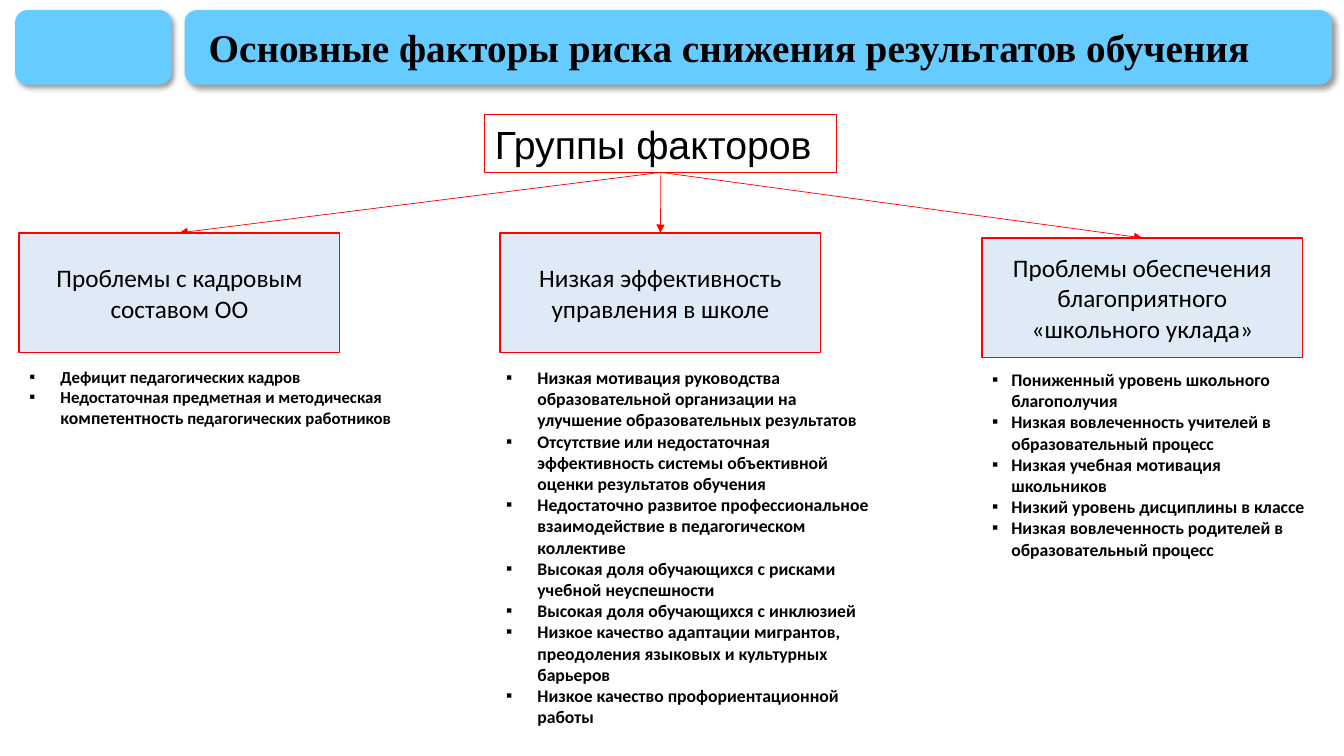
from lxml import etree
from pptx import Presentation
from pptx.dml.color import RGBColor
from pptx.enum import shapes, text
from pptx.oxml import ns
from pptx.util import Inches, Pt

RED, SKY, PALE, BLACK = "FF0000", "66CCFF", "DEEBF7", "000000"

# Each group: heading, card left and top, list position and width, indent, size, factors.
# A factor may be a list of (text, size) parts.
GROUPS = [
    ("Проблемы с кадровым составом ОО", 0.19, 2.31,
     (0.19, 3.59, 3.92, 0.72), 0.31, 12, [
         "Дефицит педагогических кадров",
         [("Недостаточная предметная и методическая ", 12),
          ("компетентность", 12.6),
          (" педагогических работников", 12)],
     ]),
    ("Низкая эффективность управления в школе", 4.96, 2.31,
     (4.92, 3.59, 3.89, 3.71), 0.31, 12.6, [
         "Низкая мотивация руководства образовательной организации на "
         "улучшение образовательных результатов",
         "Отсутствие или недостаточная эффективность системы объективной "
         "оценки результатов обучения",
         "Недостаточно развитое профессиональное взаимодействие в "
         "педагогическом коллективе",
         "Высокая доля обучающихся с рисками учебной неуспешности",
         "Высокая доля обучающихся с инклюзией",
         "Низкое качество адаптации мигрантов, преодоления языковых и "
         "культурных барьеров",
         "Низкое качество профориентационной работы",
     ]),
    ("Проблемы обеспечения благоприятного «школьного уклада»", 9.74, 2.36,
     (9.74, 3.61, 3.45, 2.01), 0.19, 12.6, [
         "Пониженный уровень школьного благополучия",
         "Низкая вовлеченность учителей в образовательный процесс",
         "Низкая учебная мотивация школьников",
         "Низкий уровень дисциплины в классе",
         "Низкая вовлеченность родителей в образовательный процесс",
     ]),
]


def color(value):
    return RGBColor.from_string(value)


def add_xml(parent, tag, **attributes):
    return etree.SubElement(parent, ns.qn(tag), attributes)


def place(shape, left, top, width, height):
    shape.left, shape.top = Inches(left), Inches(top)
    shape.width, shape.height = Inches(width), Inches(height)


def write(paragraph, words, size=18, font="Calibri", bold=False,
          align=text.PP_ALIGN.LEFT, spacing=1.0):
    paragraph.alignment = align
    paragraph.line_spacing = spacing
    paragraph.space_before = Pt(0)
    run = paragraph.add_run()
    run.text = words
    run.font.size = Pt(size)
    run.font.name = font
    run.font.bold = bold
    run.font.color.rgb = color(BLACK)


def set_frame(shape, anchor, wrap=True):
    frame = shape.text_frame
    frame.auto_size = text.MSO_AUTO_SIZE.NONE
    frame.vertical_anchor = anchor
    frame.word_wrap = wrap
    return frame


def add_box(slide, kind, position, fill=None, line=None, line_width=1):
    box = slide.shapes.add_shape(kind, *map(Inches, position))
    box.shadow.inherit = False
    if fill:
        box.fill.solid()
        box.fill.fore_color.rgb = color(fill)
    else:
        box.fill.background()
    if line:
        box.line.color.rgb = color(line)
        box.line.width = Pt(line_width)
    else:
        box.line.fill.background()
    return box


def add_banner(slide, left, width):
    banner = add_box(slide, shapes.MSO_SHAPE.ROUNDED_RECTANGLE,
                     (left, 0.1, width, 0.74), SKY)
    effects = banner._element.spPr.find(ns.qn("a:effectLst"))
    shadow = add_xml(effects, "a:outerShdw", blurRad=str(Pt(4)), dist=str(Pt(3)),
                     dir="2700000", algn="tl", rotWithShape="0")
    tone = add_xml(shadow, "a:srgbClr", val=BLACK)
    add_xml(tone, "a:alpha", val="40000")


def add_arrow(slide, source, target):
    arrow = slide.shapes.add_connector(shapes.MSO_CONNECTOR.STRAIGHT, 0, 0, 0, 0)
    arrow.begin_connect(source, 2)
    arrow.end_connect(target, 0)
    arrow.line.color.rgb = color(RED)
    arrow.line.width = Pt(0.5)
    add_xml(arrow.line._get_or_add_ln(), "a:tailEnd", type="triangle")
    add_xml(arrow._element.spPr, "a:effectLst")
    # The arrow lies under the card it points to
    target._element.addprevious(arrow._element)


def add_card(slide, heading, left, top):
    card = add_box(slide, shapes.MSO_SHAPE.RECTANGLE, (left, top, 3.18, 1.19), PALE, RED)
    frame = set_frame(card, text.MSO_ANCHOR.MIDDLE)
    write(frame.paragraphs[0], heading, align=text.PP_ALIGN.CENTER)
    return card


def add_bullet(paragraph, indent):
    properties = paragraph._p.get_or_add_pPr()
    properties.set("marL", str(Inches(indent)))
    properties.set("indent", str(-Inches(indent)))
    add_xml(properties, "a:buFont", typeface="Arial")
    add_xml(properties, "a:buChar", char="▪")


def fill_list(body, position, factors, indent, size):
    place(body, *position)
    frame = set_frame(body, text.MSO_ANCHOR.TOP)
    for number, factor in enumerate(factors):
        paragraph = frame.add_paragraph() if number else frame.paragraphs[0]
        add_bullet(paragraph, indent)
        parts = [(factor, size)] if isinstance(factor, str) else factor
        for words, part_size in parts:
            write(paragraph, words, size=part_size, bold=True)


def main():
    deck = Presentation()
    deck.slide_width, deck.slide_height = Inches(13.33), Inches(7.5)
    slide = deck.slides.add_slide(deck.slide_layouts.get_by_name("Comparison"))
    title, *bodies = list(slide.placeholders)

    # Header
    add_banner(slide, 1.83, 11.38)
    add_banner(slide, 0.15, 1.55)
    place(title, 1.97, 0.16, 11.1, 0.66)
    slide.shapes._spTree.append(title._element)
    frame = set_frame(title, text.MSO_ANCHOR.MIDDLE)
    write(frame.paragraphs[0], "Основные факторы риска снижения результатов обучения",
          size=28, font="Times New Roman", bold=True, spacing=0.9)

    # Root of the diagram
    root = add_box(slide, shapes.MSO_SHAPE.RECTANGLE, (4.81, 1.14, 3.49, 0.57),
                   line=RED, line_width=0.75)
    frame = set_frame(root, text.MSO_ANCHOR.TOP, wrap=False)
    write(frame.paragraphs[0], "Группы факторов", size=28, font="Arial")

    # Groups with their factors
    for body, group in zip(bodies, GROUPS):
        heading, left, top, position, indent, size, factors = group
        card = add_card(slide, heading, left, top)
        add_arrow(slide, root, card)
        fill_list(body, position, factors, indent, size)

    # Unused placeholders
    for spare in bodies[len(GROUPS):]:
        spare._element.getparent().remove(spare._element)

    deck.save("out.pptx")


if __name__ == "__main__":
    main()
